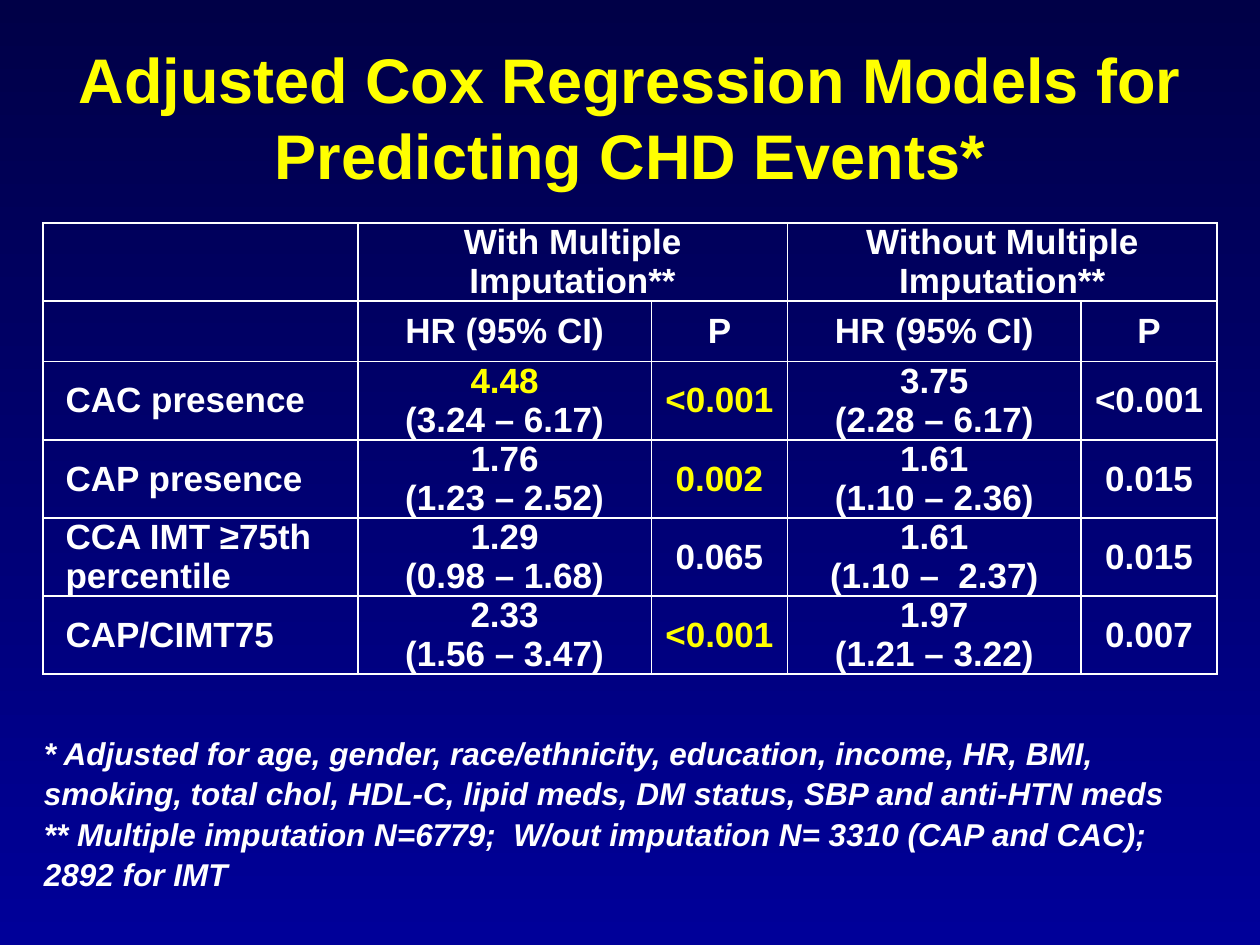
from lxml.etree import SubElement
from pptx import Presentation
from pptx.dml.color import RGBColor
from pptx.enum.text import MSO_ANCHOR, PP_ALIGN
from pptx.oxml.ns import qn
from pptx.util import Inches, Pt

COLORS = {"top": "000047", "base": "000099", "text": "FFFFFF", "mark": "FFFF00"}

COLS = [2.5, 2.33, 1.08, 2.33, 1.08]
ROWS = [0.62, 0.48] + [0.62] * 4
CELLS = [
    ["", "With Multiple Imputation**", "", "Without Multiple Imputation**", ""],
    ["", "HR (95% CI)", "P", "HR (95% CI)", "P"],
    ["CAC presence", "4.48\n(3.24 – 6.17)", "<0.001", "3.75\n(2.28 – 6.17)", "<0.001"],
    ["CAP presence", "1.76\n(1.23 – 2.52)", "0.002", "1.61\n(1.10 – 2.36)", "0.015"],
    ["CCA IMT ≥75th percentile", "1.29\n(0.98 – 1.68)", "0.065", "1.61\n(1.10 –  2.37)", "0.015"],
    ["CAP/CIMT75", "2.33\n(1.56 – 3.47)", "<0.001", "1.97\n(1.21 – 3.22)", "0.007"],
]
MARKS = {(2, 1), (2, 2), (3, 2), (5, 2)}
NOTES = [
    "* Adjusted for age, gender, race/ethnicity, education, income, HR, BMI, "
    "smoking, total chol, HDL-C, lipid meds, DM status, SBP and anti-HTN meds ",
    "** Multiple imputation N=6779;  W/out imputation N= 3310 (CAP and CAC); 2892 for IMT",
]


def rgb(name):
    return RGBColor.from_string(COLORS[name])


def write(para, text, size=20, color="text", italic=False, align=PP_ALIGN.CENTER, pitch=None):
    para.alignment = align
    if pitch:
        para.line_spacing = Pt(pitch)
    for i, line in enumerate(text.split("\n")):
        if i:
            para.add_line_break()
        run = para.add_run()
        run.text = line
        font = run.font
        font.name, font.size = "Arial", Pt(size)
        font.bold, font.italic = True, italic
        font.color.rgb = rgb(color)


class Deck:
    def __init__(self):
        self.file = Presentation()
        self.file.slide_width, self.file.slide_height = Inches(10), Inches(7.5)
        self.slide = self.file.slides.add_slide(self.file.slide_layouts[5])

    def ground(self):
        fill = self.slide.background.fill
        fill.gradient()
        fill.gradient_angle = 270
        for stop, name, place in zip(fill.gradient_stops, ("top", "base"), (0, 1)):
            stop.color.rgb, stop.position = rgb(name), place

    def title(self, text, x, y, w, h):
        shape = self.slide.shapes.title
        shape.left, shape.top = Inches(x), Inches(y)
        shape.width, shape.height = Inches(w), Inches(h)
        shape.text_frame.vertical_anchor = MSO_ANCHOR.MIDDLE
        write(shape.text_frame.paragraphs[0], text, size=36, color="mark", pitch=43)

    def border(self, cell):
        props = cell._tc.get_or_add_tcPr()
        for i, side in enumerate(("lnL", "lnR", "lnT", "lnB")):
            line = SubElement(props, qn(f"a:{side}"), w=str(Pt(1)))
            fill = SubElement(line, qn("a:solidFill"))
            SubElement(fill, qn("a:srgbClr"), val=COLORS["text"])
            props.insert(i, line)

    def cell(self, cell, text, label, marked):
        cell.fill.background()
        self.border(cell)
        cell.vertical_anchor = MSO_ANCHOR.MIDDLE
        cell.margin_left = Inches(0.18 if label else 0.07)
        cell.margin_right = Inches(0.07)
        cell.margin_top = cell.margin_bottom = 0
        if not text:
            return
        frame = cell.text_frame
        for i, line in enumerate(text.split("\n")):
            para = frame.add_paragraph() if i else frame.paragraphs[0]
            write(para, line, color="mark" if marked and not i else "text",
                  align=PP_ALIGN.LEFT if label else PP_ALIGN.CENTER)

    def table(self, x, y):
        frame = self.slide.shapes.add_table(
            len(ROWS), len(COLS), Inches(x), Inches(y), Inches(sum(COLS)), Inches(sum(ROWS)))
        table = frame.table
        table.first_row = table.horz_banding = False
        for col, width in zip(table.columns, COLS):
            col.width = Inches(width)
        for row, height in zip(table.rows, ROWS):
            row.height = Inches(height)
        for left in (1, 3):
            table.cell(0, left).merge(table.cell(0, left + 1))
        for r, line in enumerate(CELLS):
            for c, text in enumerate(line):
                self.cell(table.cell(r, c), text, c == 0, (r, c) in MARKS)

    def note(self, text, x, y, w, h):
        frame = self.slide.shapes.add_textbox(
            Inches(x), Inches(y), Inches(w), Inches(h)).text_frame
        frame.word_wrap = True
        frame.vertical_anchor = MSO_ANCHOR.MIDDLE
        para = frame.paragraphs[0]
        para.space_before = Pt(6)
        write(para, text, size=18, italic=True, align=PP_ALIGN.LEFT, pitch=23)


def main():
    deck = Deck()
    deck.ground()
    deck.table(0.34, 1.77)
    deck.title("Adjusted Cox Regression Models for Predicting CHD Events*", 0.5, 0.3, 9, 1.25)
    deck.note("\n".join(NOTES), 0.25, 5.75, 9.5, 1.39)
    deck.file.save("out.pptx")


if __name__ == "__main__":
    main()
